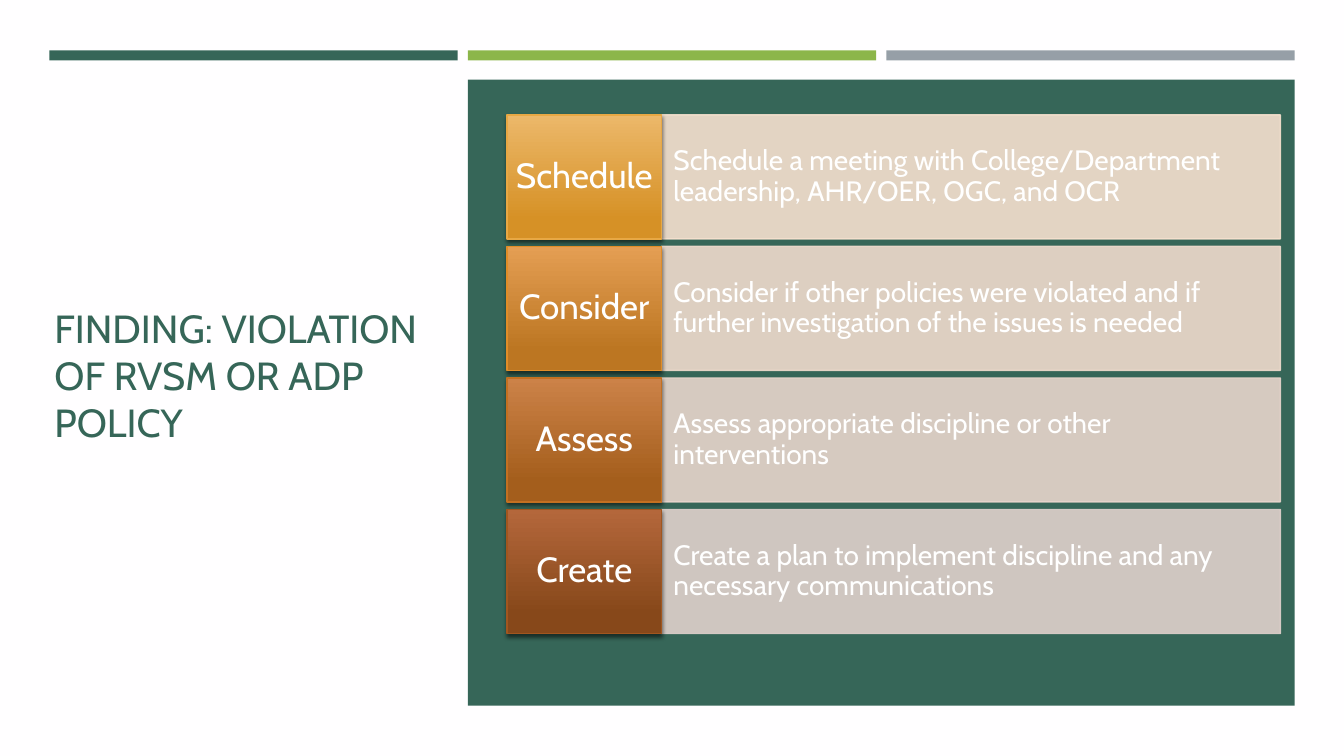
from lxml.etree import SubElement
from pptx import Presentation
from pptx.dml.color import RGBColor
from pptx.enum.shapes import MSO_SHAPE as Preset
from pptx.enum.text import MSO_ANCHOR as Anchor, PP_ALIGN as Align
from pptx.oxml.ns import qn
from pptx.util import Inches, Pt

GREEN = "366658"
WHITE = "FFFFFF"
BARS = [GREEN, "8CB64A", "969FA7"]
STEPS = [
    ("Schedule", "Schedule a meeting with College/Department leadership, AHR/OER, OGC, and OCR",
     "ECB86A", "D69126", "E8A844", "F6E1CF"),
    ("Consider", "Consider if other policies were violated and if further investigation of the issues is needed",
     "E49E53", "BC7622", "E08D28", "F0DBCD"),
    ("Assess", "Assess appropriate discipline or other interventions",
     "CC8248", "A45E1C", "C37021", "E8D5CC"),
    ("Create", "Create a plan to implement discipline and any necessary communications",
     "B4673B", "87481A", "A1561F", "E0D1CC"),
]


def color(value):
    return RGBColor.from_string(value)


class Slide:
    font = "Cabin"

    def __init__(self, deck, background):
        self.page = deck.slides.add_slide(deck.slide_layouts[5])
        fill = self.page.background.fill
        fill.solid()
        fill.fore_color.rgb = color(background)

    def add_text(self, shape, text, size, ink, align=Align.LEFT, spacing=1.0, inset=(0.1, 0.05)):
        frame = shape.text_frame
        frame.word_wrap = True
        frame.vertical_anchor = Anchor.MIDDLE
        frame.margin_left = frame.margin_right = Inches(inset[0])
        frame.margin_top = frame.margin_bottom = Inches(inset[1])
        para = frame.paragraphs[0]
        para.alignment = align
        para.line_spacing = spacing
        span = para.add_run()
        span.text = text
        span.font.name = self.font
        span.font.size = Pt(size)
        span.font.color.rgb = color(ink)

    def title(self, text, left, top, width, height):
        box = self.page.shapes.title
        box.left, box.top, box.width, box.height = map(Inches, (left, top, width, height))
        self.add_text(box, text, 28, GREEN)

    def block(self, left, top, width, height, fill, line=None):
        shape = self.page.shapes.add_shape(Preset.RECTANGLE, *map(Inches, (left, top, width, height)))
        shape.shadow.inherit = False
        shape.fill.solid()
        shape.fill.fore_color.rgb = color(fill)
        if line:
            shape.line.color.rgb = color(line)
            shape.line.width = Pt(1)
        else:
            shape.line.fill.background()
        return shape

    def panel(self, left, top, width, height, tint, text):
        shape = self.block(left, top, width, height, tint, tint)
        for paint in shape._element.spPr.iter(qn("a:srgbClr")):
            SubElement(paint, qn("a:alpha"), val="90000")
        self.add_text(shape, text, 20, WHITE, spacing=0.9, inset=(0.12, 0.31))

    def label(self, left, top, width, height, light, dark, edge, text):
        shape = self.block(left, top, width, height, light, edge)
        shape.fill.gradient()
        shape.fill.gradient_angle = 270
        for stop, tone, position in zip(shape.fill.gradient_stops, (light, dark), (0, 0.84)):
            stop.color.rgb = color(tone)
            stop.position = position
        effects = shape._element.spPr.find(qn("a:effectLst"))
        shadow = SubElement(effects, qn("a:outerShdw"), blurRad=str(Pt(3)), dist=str(Pt(2)),
                            dir="5400000", rotWithShape="0")
        black = SubElement(shadow, qn("a:srgbClr"), val="000000")
        SubElement(black, qn("a:alpha"), val="55000")
        self.add_text(shape, text, 25, WHITE, Align.CENTER, 0.9, (0.06, 0.12))


def main():
    deck = Presentation()
    deck.slide_width, deck.slide_height = Inches(13.33), Inches(7.5)
    slide = Slide(deck, "FFFEFF")
    for index, tone in enumerate(BARS):
        slide.block(0.49 + index * 4.15, 0.5, 4.05, 0.1, tone)
    slide.block(4.64, 0.79, 8.2, 6.21, GREEN)
    for index, (name, detail, light, dark, edge, tint) in enumerate(STEPS):
        top = 1.14 + index * 1.305
        slide.panel(6.56, top, 6.14, 1.23, tint, detail)
        slide.label(5.03, top, 1.53, 1.23, light, dark, edge, name)
    slide.title("FINDING: VIOLATION OF RVSM OR ADP POLICY", 0.44, 1.14, 3.82, 5.15)
    deck.save("out.pptx")


if __name__ == "__main__":
    main()
